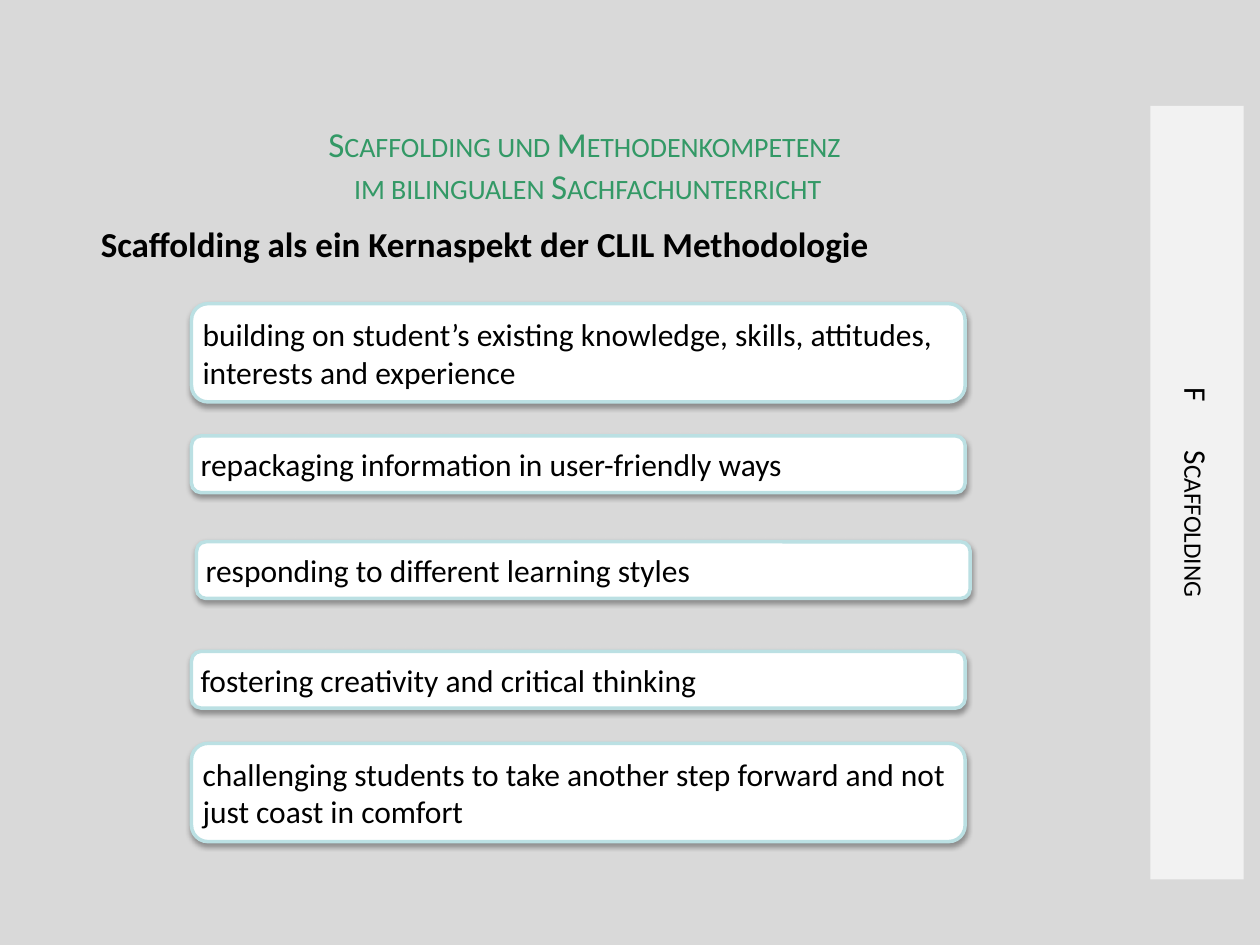
import pptx
import pptx.util
import pptx.dml.color
import pptx.enum.shapes
import pptx.enum.text
import pptx.oxml.ns
from lxml import etree

BACKGROUND = pptx.dml.color.RGBColor(0xD9, 0xD9, 0xD9)
SIDEBAR_GREY = pptx.dml.color.RGBColor(0xF2, 0xF2, 0xF2)
WHITE = pptx.dml.color.RGBColor(0xFF, 0xFF, 0xFF)
BLACK = pptx.dml.color.RGBColor(0, 0, 0)
PALE_BLUE = pptx.dml.color.RGBColor(0xBB, 0xE0, 0xE3)
GREEN = pptx.dml.color.RGBColor(0x33, 0x99, 0x66)

SLIDE_WIDTH = pptx.util.Inches(10)
SLIDE_HEIGHT = pptx.util.Inches(7.5)
COLUMN = SLIDE_WIDTH / 100
ROW = SLIDE_HEIGHT / 100
INSET = pptx.util.Inches(0.05)
ONE_LINE = 6
TWO_LINES = 10.4

ALIGN = pptx.enum.text.PP_ALIGN
ANCHOR = pptx.enum.text.MSO_ANCHOR
SHAPE = pptx.enum.shapes.MSO_SHAPE

PRINCIPLES = [
    ("building on student’s existing knowledge, skills, attitudes, interests and experience", 0, 0, TWO_LINES),
    ("repackaging information in user-friendly ways", 0, 14, ONE_LINE),
    ("responding to different learning styles", 0.4, 25.2, ONE_LINE),
    ("fostering creativity and critical thinking", 0, 36.8, ONE_LINE),
    ("challenging students to take another step forward and not just coast in comfort", 0, 46.53, TWO_LINES),
]


def place(box):
    left, top, width, height = box
    return round(left * COLUMN), round(top * ROW), round(width * COLUMN), round(height * ROW)


def write(holder, text, size, color=BLACK, align=ALIGN.LEFT, anchor=ANCHOR.TOP, bold=False):
    frame = holder.text_frame
    frame.word_wrap = True
    frame.margin_left = frame.margin_right = INSET
    frame.margin_top = frame.margin_bottom = INSET
    frame.vertical_anchor = anchor
    paragraph = frame.paragraphs[0]
    paragraph.text = text
    paragraph.alignment = align
    paragraph.font.name = "Calibri"
    paragraph.font.size = pptx.util.Pt(size)
    paragraph.font.bold = bold
    paragraph.font.color.rgb = color
    return paragraph


def use_small_caps(paragraph):
    for run in paragraph.runs:
        run._r.get_or_add_rPr().set("cap", "small")


def add_panel(slide, kind, box, fill):
    panel = slide.shapes.add_shape(kind, *place(box))
    panel.shadow.inherit = False
    panel.fill.solid()
    panel.fill.fore_color.rgb = fill
    return panel


def drop_shadow(card):
    qn = pptx.oxml.ns.qn
    effects = card._element.spPr.find(qn("a:effectLst"))
    shadow = etree.SubElement(
        effects, qn("a:outerShdw"),
        blurRad=str(pptx.util.Pt(3)), dist=str(pptx.util.Pt(1.8)), dir="5400000", rotWithShape="0")
    tint = etree.SubElement(shadow, qn("a:srgbClr"), val=str(BLACK))
    etree.SubElement(tint, qn("a:alpha"), val="35000")


def add_heading(slide, box):
    heading = slide.shapes.add_textbox(*place(box))
    write(heading, "Scaffolding als ein Kernaspekt der CLIL Methodologie", 20, bold=True)


def add_sidebar(slide, box):
    sidebar = add_panel(slide, SHAPE.RECTANGLE, box, SIDEBAR_GREY)
    sidebar.line.fill.background()
    label = write(sidebar, "F\tScaffolding", 18, align=ALIGN.CENTER, anchor=ANCHOR.MIDDLE)
    use_small_caps(label)
    sidebar.text_frame._txBody.bodyPr.set("vert", "vert")


def add_title(slide, box):
    title = slide.shapes.add_textbox(*place(box))
    text = "Scaffolding und Methodenkompetenz \vim bilingualen Sachfachunterricht"
    use_small_caps(write(title, text, 20, GREEN, ALIGN.CENTER))


def add_principles(slide, box):
    left, top, width, _ = box
    for text, indent, offset, height in PRINCIPLES:
        card_box = (left + indent, top + offset, width, height)
        card = add_panel(slide, SHAPE.ROUNDED_RECTANGLE, card_box, WHITE)
        card.line.color.rgb = PALE_BLUE
        card.line.width = pptx.util.Pt(2)
        drop_shadow(card)
        write(card, text, 18, anchor=ANCHOR.MIDDLE)


def main():
    deck = pptx.Presentation()
    deck.slide_width = SLIDE_WIDTH
    deck.slide_height = SLIDE_HEIGHT
    slide = deck.slides.add_slide(deck.slide_layouts[6])
    slide.background.fill.solid()
    slide.background.fill.fore_color.rgb = BACKGROUND
    add_heading(slide, (7.5, 22.93, 80.3, 5.87))
    add_sidebar(slide, (91.3, 11.2, 7.4, 81.87))
    add_title(slide, (2, 12.27, 89.3, 10.27))
    add_principles(slide, (15.2, 32.13, 61.4, 56.93))
    deck.save("out.pptx")


if __name__ == "__main__":
    main()
